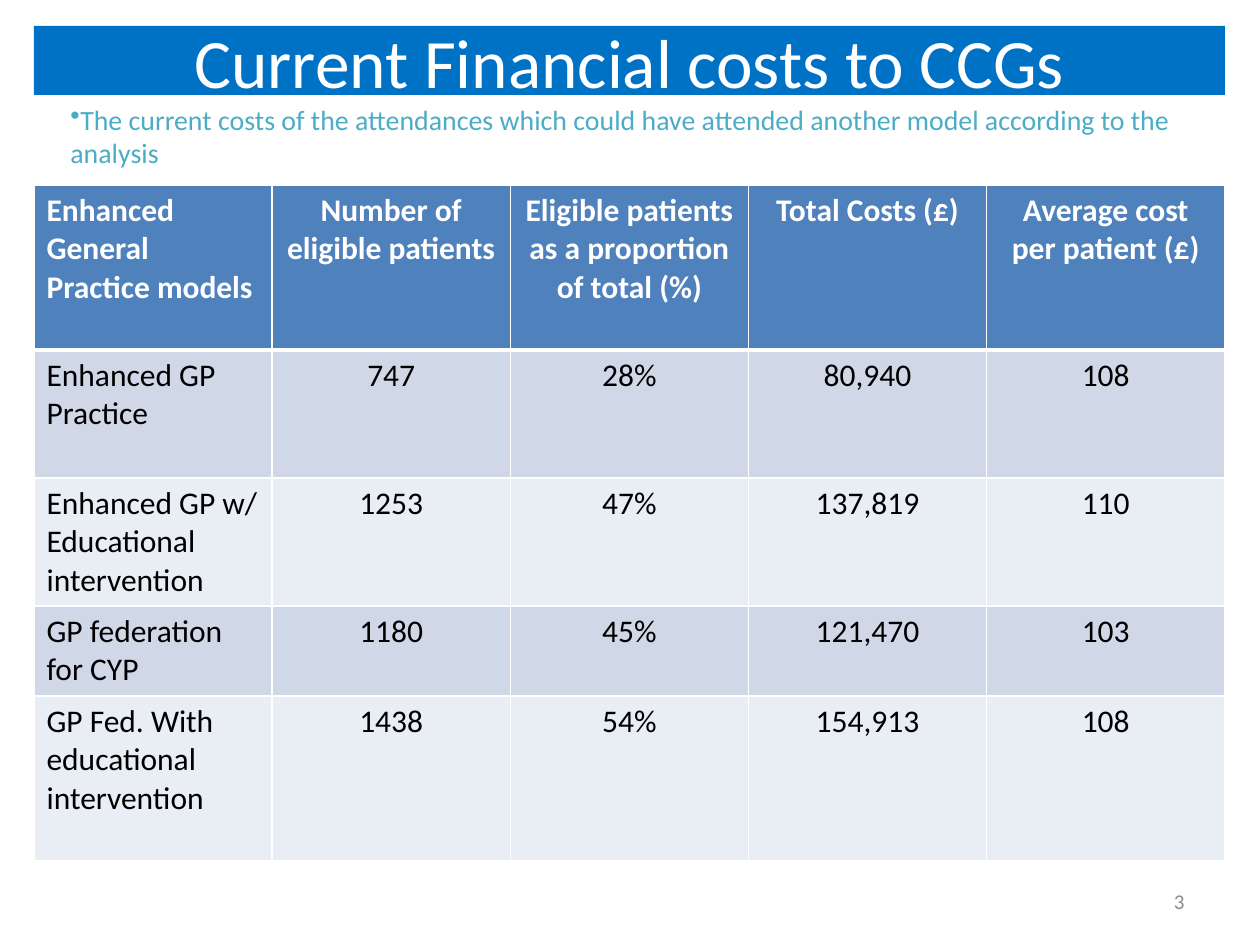
import dataclasses

import lxml.etree
import pptx
import pptx.dml.color
import pptx.enum.shapes
import pptx.enum.text
import pptx.oxml.ns
import pptx.util

SCALE = 914400 / 126
ALIGN = pptx.enum.text.PP_ALIGN
MIDDLE = pptx.enum.text.MSO_ANCHOR.MIDDLE
WHITE = "FFFFFF"
HEADER = "4F81BD"
BANDS = ("D0D8E8", "E9EDF4")


@dataclasses.dataclass
class Box:
    left: int
    top: int
    width: int
    height: int

    def place(self) -> tuple:
        return px(self.left), px(self.top), px(self.width), px(self.height)


@dataclasses.dataclass
class Style:
    size: float
    color: str
    align: object = ALIGN.LEFT
    bold: bool = False


@dataclasses.dataclass
class Row:
    height: int
    texts: tuple


ROWS = (
    Row(165, ("Enhanced General Practice models", "Number of eligible patients",
              "Eligible patients as a proportion of total (%)",
              "Total Costs (£)", "Average cost per patient (£)")),
    Row(128, ("Enhanced GP Practice", "747", "28%", "80,940", "108")),
    Row(128, ("Enhanced GP w/\nEducational intervention",
              "1253", "47%", "137,819", "110")),
    Row(90, ("GP federation for CYP", "1180", "45%", "121,470", "103")),
    Row(165, ("GP Fed. With educational intervention",
              "1438", "54%", "154,913", "108")),
)


def px(length: int) -> int:
    return round(length * SCALE)


def rgb(color: str):
    return pptx.dml.color.RGBColor.from_string(color)


def write(frame, text: str, style: Style) -> None:
    frame.text = text
    frame.word_wrap = True
    for para in frame.paragraphs:
        para.alignment = style.align
        font = para.font
        font.name = "Calibri"
        font.size = pptx.util.Pt(style.size)
        font.bold = style.bold
        font.color.rgb = rgb(style.color)


def add_text(slide, box: Box, text: str, style: Style):
    frame = slide.shapes.add_textbox(*box.place()).text_frame
    write(frame, text, style)
    return frame


def add_title(slide, box: Box, text: str) -> None:
    kind = pptx.enum.shapes.MSO_SHAPE.RECTANGLE
    shape = slide.shapes.add_shape(kind, *box.place())
    shape.shadow.inherit = False
    shape.fill.solid()
    shape.fill.fore_color.rgb = rgb("0072C6")
    shape.line.fill.background()
    frame = shape.text_frame
    frame.margin_top = frame.margin_bottom = 0
    frame.vertical_anchor = MIDDLE
    write(frame, text, Style(39.6, WHITE, ALIGN.CENTER))


def add_bullet(para, indent: int) -> None:
    props = para._p.get_or_add_pPr()
    props.set("marL", str(px(indent)))
    props.set("indent", "0")
    mark = lxml.etree.Element(pptx.oxml.ns.qn("a:buChar"), char="•")
    props.insert_element_before(mark, "a:tabLst", "a:defRPr", "a:extLst")


def add_edge(cell, place: int, side: str, weight: int) -> None:
    line = lxml.etree.Element(pptx.oxml.ns.qn(f"a:ln{side}"),
                              w=str(pptx.util.Pt(weight)))
    fill = lxml.etree.SubElement(line, pptx.oxml.ns.qn("a:solidFill"))
    lxml.etree.SubElement(fill, pptx.oxml.ns.qn("a:srgbClr"), val=WHITE)
    cell._tc.get_or_add_tcPr().insert(place, line)


def add_cell(cell, text: str, row: int, col: int) -> None:
    head = row == 0
    cell.fill.solid()
    cell.fill.fore_color.rgb = rgb(HEADER if head else BANDS[(row - 1) % 2])
    align = ALIGN.CENTER if col else ALIGN.LEFT
    write(cell.text_frame, text,
          Style(18, WHITE if head else "000000", align, head))
    weights = {"L": 1, "R": 1, "T": 3 if row == 1 else 1, "B": 3 if head else 1}
    for place, (side, weight) in enumerate(weights.items()):
        add_edge(cell, place, side, weight)


def add_grid(slide, box: Box, rows: tuple) -> None:
    count = len(rows[0].texts)
    table = slide.shapes.add_table(len(rows), count, *box.place()).table
    for col in table.columns:
        col.width = px(box.width) // count
    for r, row in enumerate(rows):
        table.rows[r].height = px(row.height)
        for c, text in enumerate(row.texts):
            add_cell(table.cell(r, c), text, r, c)


def main() -> None:
    deck = pptx.Presentation()
    deck.slide_width, deck.slide_height = px(1260), px(945)
    slide = deck.slides.add_slide(deck.slide_layouts[6])
    add_title(slide, Box(34, 26, 1191, 69), "Current Financial costs to CCGs")
    note = add_text(slide, Box(34, 96, 1191, 79),
                    "The current costs of the attendances which could have "
                    "attended another model according to the analysis",
                    Style(15.9, "4BACC6"))
    add_bullet(note.paragraphs[0], 24)
    add_grid(slide, Box(34, 185, 1191, sum(row.height for row in ROWS)), ROWS)
    page = add_text(slide, Box(903, 876, 294, 50), "3",
                    Style(12, "8C8C8C", ALIGN.RIGHT))
    page.vertical_anchor = MIDDLE
    deck.save("out.pptx")


if __name__ == "__main__":
    main()
